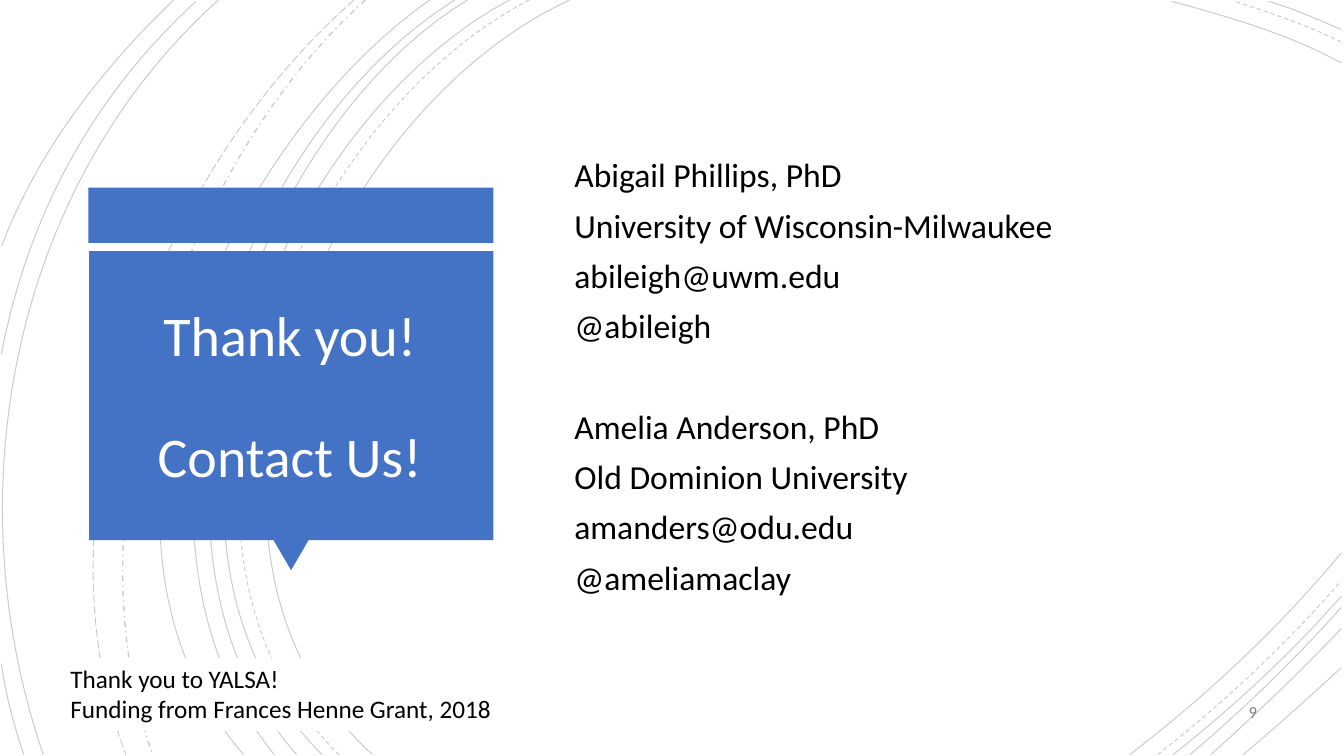
from lxml.etree import SubElement
from pptx import Presentation
from pptx.dml.color import RGBColor
from pptx.enum.dml import MSO_LINE
from pptx.enum.shapes import MSO_SHAPE
from pptx.enum.text import MSO_ANCHOR as ANCHOR, PP_ALIGN as ALIGN
from pptx.oxml.ns import qn
from pptx.util import Pt

FONT, BLUE, WHITE, BLACK, GRAY = "Calibri", "4472C4", "FFFFFF", "000000", "808080"

TITLE = ["Thank you!", "Contact Us!"]
CONTACTS = [
    ["Abigail Phillips, PhD", "University of Wisconsin-Milwaukee",
     "abileigh@uwm.edu", "@abileigh"],
    ["Amelia Anderson, PhD", "Old Dominion University",
     "amanders@odu.edu", "@ameliamaclay"],
]
FUNDING = ["Thank you to YALSA!", "Funding from Frances Henne Grant, 2018"]
PAGE_NUMBER = "9"

SOLID = (0.75, MSO_LINE.SOLID)
DASH = (0.75, MSO_LINE.DASH)
DASH_DOT = (1, MSO_LINE.DASH_DOT)
LONG_DASH = (0.75, MSO_LINE.LONG_DASH)

# Line style, then start, two control points and end of a cubic curve
ARCS = [
    (SOLID, (407, 0), (227, 83), (103, 389), (266, 539)),
    (SOLID, (958, 45), (920, 24), (877, 12), (837, 1)),
    (SOLID, (807, 539), (862, 497), (914, 448), (958, 395)),
    (DASH, (378, 0), (205, 90), (89, 387), (242, 539)),
    (DASH, (958, 30), (934, 18), (907, 9), (882, 1)),
    (DASH, (827, 539), (873, 503), (918, 461), (958, 415)),
    (SOLID, (364, 0), (194, 91), (79, 387), (230, 539)),
    (SOLID, (958, 21), (941, 14), (924, 6), (906, 1)),
    (SOLID, (838, 539), (881, 505), (922, 467), (958, 426)),
    (SOLID, (334, 0), (176, 96), (79, 390), (212, 539)),
    (SOLID, (850, 539), (888, 507), (924, 472), (958, 434)),
    (SOLID, (325, 0), (166, 99), (70, 384), (196, 539)),
    (SOLID, (865, 539), (897, 510), (929, 480), (958, 449)),
    (SOLID, (307, 0), (156, 106), (38, 381), (174, 539)),
    (SOLID, (888, 539), (912, 519), (935, 498), (958, 477)),
    (DASH_DOT, (261, 0), (127, 120), (47, 366), (109, 539)),
    (LONG_DASH, (253, 0), (113, 122), (21, 359), (90, 539)),
    (SOLID, (156, 0), (8, 133), (-33, 353), (31, 539)),
    (SOLID, (140, 1), (66, 69), (20, 154), (1, 253)),
    (SOLID, (1, 474), (4, 496), (10, 518), (17, 539)),
    (SOLID, (124, 0), (72, 50), (27, 108), (1, 176)),
]


def rgb(color):
    return RGBColor.from_string(color)


def add_arc(style, *points):
    """Draw one cubic curve, turning the three line segments into a Bezier."""
    first, *rest = [(Pt(x), Pt(y)) for x, y in points]
    builder = arc_group.shapes.build_freeform(*first, scale=1.0)
    builder.add_line_segments(rest, close=False)
    sp = builder.convert_to_shape()
    outline = sp._element.find(".//" + qn("a:path"))
    bezier = SubElement(outline, qn("a:cubicBezTo"))
    for segment in outline.findall(qn("a:lnTo")):
        bezier.append(segment[0])
        outline.remove(segment)
    sp.shadow.inherit = False
    sp.fill.background()
    width, sp.line.dash_style = style
    sp.line.width = Pt(width)
    sp.line.color.rgb = rgb(BLACK)
    color = sp.line._ln.find(".//" + qn("a:srgbClr"))
    SubElement(color, qn("a:alpha"), val="20000")


def add_block(parent, kind, box, fill):
    sp = parent.add_shape(kind, *map(Pt, box))
    sp.shadow.inherit = False
    sp.fill.solid()
    sp.fill.fore_color.rgb = rgb(fill)
    sp.line.fill.background()
    return sp


def write(sp, lines, size, color, align=ALIGN.LEFT, anchor=ANCHOR.MIDDLE, spacing=None):
    tf = sp.text_frame
    tf.word_wrap = True
    tf.vertical_anchor = anchor
    tf.text = "\n".join(lines)
    for p in tf.paragraphs:
        p.alignment = align
        p.line_spacing = spacing
        for r in p.runs:
            r.font.name, r.font.size = FONT, Pt(size)
            r.font.color.rgb = rgb(color)
    return tf.paragraphs


prs = Presentation()
prs.slide_width, prs.slide_height = Pt(960), Pt(540)
s = prs.slides.add_slide(prs.slide_layouts[5])
shapes = s.shapes

arc_group = shapes.add_group_shape()
for arc in ARCS:
    add_arc(*arc)

callout = shapes.add_group_shape().shapes
add_block(callout, MSO_SHAPE.RECTANGLE, (63.2, 134, 289.2, 39.5), BLUE)
pointer = add_block(callout, MSO_SHAPE.ISOSCELES_TRIANGLE, (195.4, 385.8, 25, 21.5), BLUE)
pointer.rotation = 180
add_block(callout, MSO_SHAPE.RECTANGLE, (63.6, 179.4, 288.8, 206.4), BLUE)

title = shapes.title
title.left, title.top, title.width, title.height = map(Pt, (71.3, 190.6, 271.4, 188.6))
title_lines = write(title, TITLE, 40, WHITE, ALIGN.CENTER, spacing=0.9)
title_lines[1].space_before = Pt(43)
shapes._spTree.append(title._element)

number = shapes.add_textbox(*map(Pt, (833, 496, 72, 25.2)))
write(number, [PAGE_NUMBER], 12, GRAY, ALIGN.RIGHT)[0].space_after = Pt(6)

contacts = shapes.add_textbox(*map(Pt, (403.2, 63.4, 494.6, 413.3)))
contact_lines = write(contacts, sum(CONTACTS, []), 24, BLACK, spacing=0.9)
for p in contact_lines:
    p.space_before = Pt(10)
contact_lines[len(CONTACTS[0])].space_before = Pt(46)

funding = add_block(shapes, MSO_SHAPE.RECTANGLE, (43.2, 470.2, 320.4, 51.1), WHITE)
funding.line.color.rgb = rgb(WHITE)
funding.line.width = Pt(1)
write(funding, FUNDING, 18, BLACK, anchor=ANCHOR.TOP)

prs.save("out.pptx")
